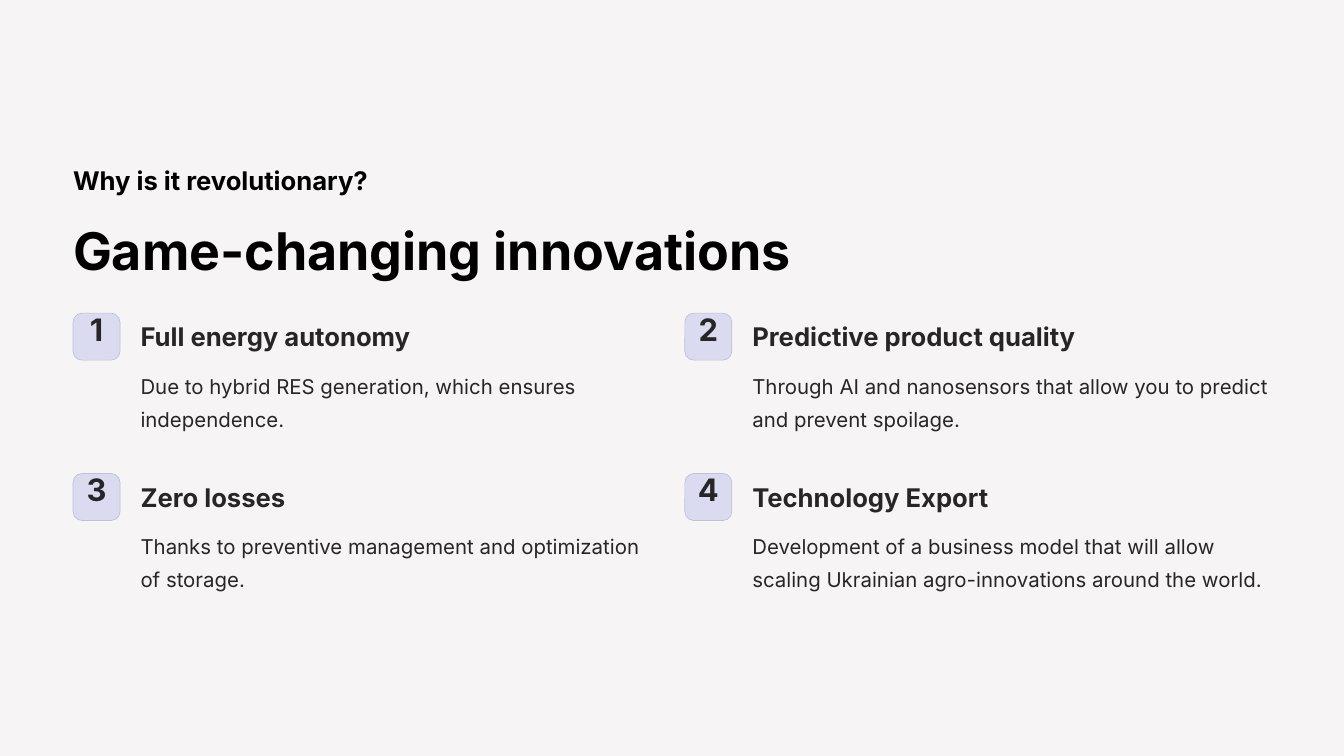
"""Build a slide with four numbered innovations in a two-by-two grid."""
from pptx import Presentation
from pptx.dml.color import RGBColor as RGB
from pptx.enum.shapes import MSO_SHAPE as SHAPE
from pptx.enum.text import PP_ALIGN as ALIGN
from pptx.util import Cm, Pt

HUES = {"back": "F6F4F4", "title": "000000", "text": "272525",
        "tile": "DADBF1", "edge": "C0C1D7"}
LEFT, TOP = 2.21, 9.47
STEP_X, STEP_Y = 18.5, 4.85
TILE = 1.42
ITEMS = [
    ("Full energy autonomy",
     "Due to hybrid RES generation, which ensures independence."),
    ("Predictive product quality",
     "Through AI and nanosensors that allow you to predict and prevent spoilage."),
    ("Zero losses",
     "Thanks to preventive management and optimization of storage."),
    ("Technology Export",
     "Development of a business model that will allow scaling "
     "Ukrainian agro-innovations around the world."),
]

deck = Presentation()
deck.slide_width, deck.slide_height = Cm(40.64), Cm(22.86)
slide = deck.slides.add_slide(deck.slide_layouts[6])
slide.background.fill.solid()
slide.background.fill.fore_color.rgb = RGB.from_string(HUES["back"])


def write(text, x, y, w, h, size, line, hue="text", bold=True, wrap=False,
          align=ALIGN.LEFT):
    box = slide.shapes.add_textbox(Cm(x), Cm(y), Cm(w), Cm(h))
    frame = box.text_frame
    frame.margin_left = frame.margin_right = 0
    frame.margin_top = frame.margin_bottom = 0
    frame.word_wrap = wrap
    para = frame.paragraphs[0]
    para.alignment = align
    para.line_spacing = Pt(line)
    run = para.add_run()
    run.text = text
    run.font.name = "Inter"
    run.font.size = Pt(size)
    run.font.bold = bold
    run.font.color.rgb = RGB.from_string(HUES[hue])


write("Why is it revolutionary?", LEFT, 4.95, 9.17, 0.99,
      size=22, line=27.5, hue="title")
write("Game-changing innovations", LEFT, 6.55, 22.02, 1.98,
      size=44.5, line=55.5, hue="title")

for i, (head, body) in enumerate(ITEMS):
    row, col = divmod(i, 2)
    x, y = LEFT + col * STEP_X, TOP + row * STEP_Y
    tile = slide.shapes.add_shape(SHAPE.ROUNDED_RECTANGLE,
                                  Cm(x), Cm(y), Cm(TILE), Cm(TILE))
    tile.adjustments[0] = 0.19
    tile.shadow.inherit = False
    tile.fill.solid()
    tile.fill.fore_color.rgb = RGB.from_string(HUES["tile"])
    tile.line.color.rgb = RGB.from_string(HUES["edge"])
    tile.line.width = Pt(0.6)
    write(str(i + 1), x + 0.24, y + 0.11, 0.94, 1.19,
          size=26.5, line=26.5, align=ALIGN.CENTER)
    write(head, x + 2.04, y + 0.2, 12.2, 0.99, size=22, line=27.5)
    write(body, x + 2.04, y + 1.57, 15.67, 2.01,
          size=17.5, line=28.5, bold=False, wrap=True)

deck.save("out.pptx")
